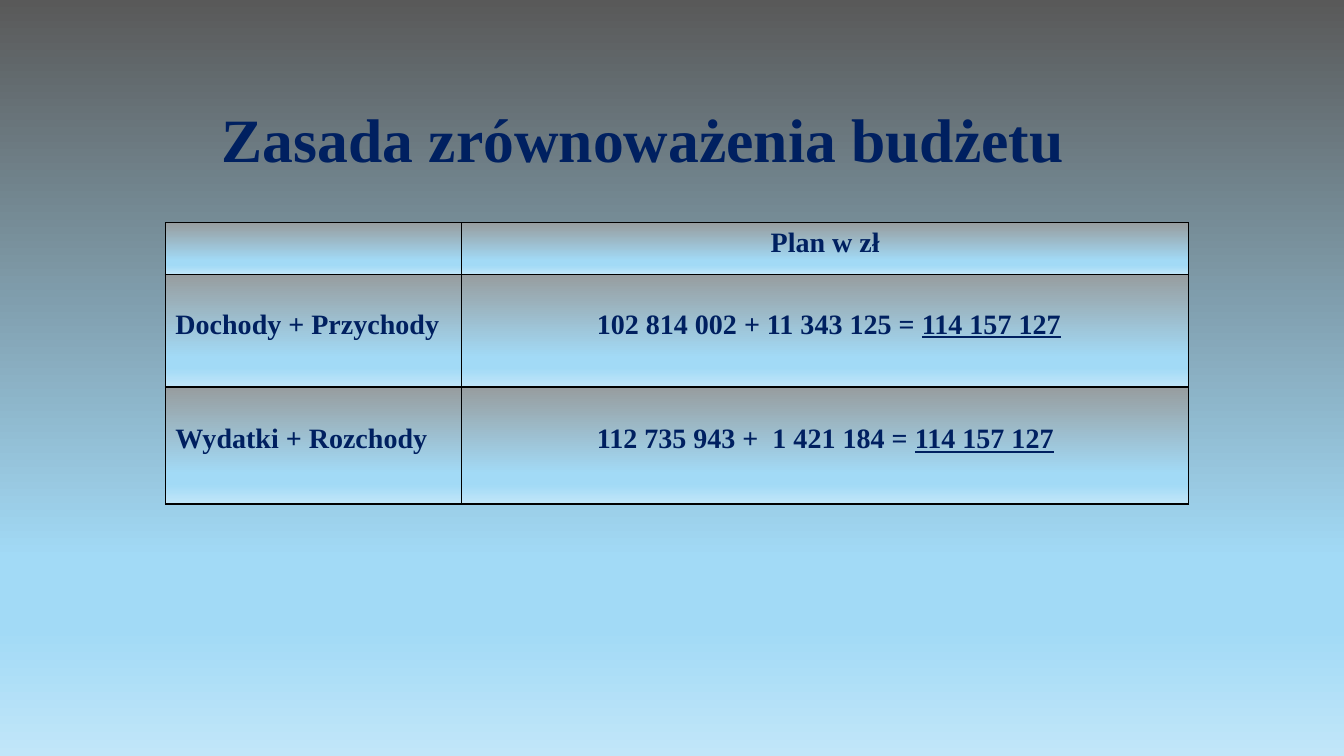
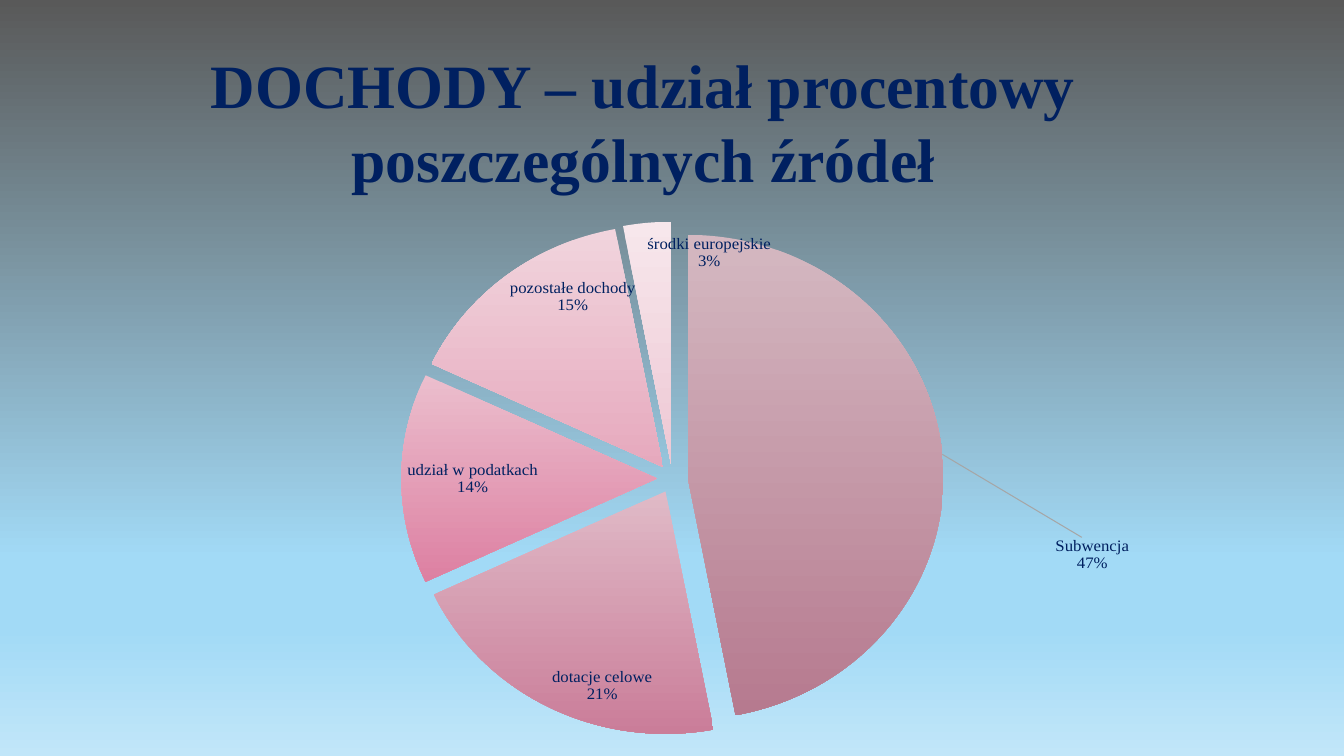
from dataclasses import dataclass

from lxml.etree import SubElement
from pptx import Presentation
from pptx.chart.data import CategoryChartData
from pptx.dml.color import RGBColor
from pptx.enum.chart import XL_CHART_TYPE, XL_LABEL_POSITION
from pptx.enum.text import MSO_ANCHOR, MSO_AUTO_SIZE, PP_ALIGN
from pptx.oxml import parse_xml
from pptx.oxml.ns import nsdecls, qn
from pptx.util import Inches, Pt


@dataclass(frozen=True)
class Theme:
    font: str = "Times New Roman"
    chart_font: str = "Calibri"
    ink: str = "002060"
    border: str = "000000"
    leader: str = "A6A6A6"
    sky: tuple = ((74, "A2DAF6"), (83, "A2DAF6"), (100, "C1E6F9"))
    page_top: tuple = (0, "595959")
    cell_top: tuple = (0, "979D9F")
    title_size: int = 44
    table_size: int = 20
    label_size: int = 12
    chart_size: int = 10


THEME = Theme()

BUDGET_ROWS = [
    ("Dochody + Przychody", " 102 814 002 + 11 343 125 = ", "114 157 127"),
    ("Wydatki + Rozchody", "112 735 943 +  1 421 184 = ", "114 157 127"),
]

INCOME = [
    ("Subwencja", 47, ("D4B8C1", "B67A8F")),
    ("dotacje celowe", 21, ("E0BAC7", "CA7D99")),
    ("udział w podatkach", 14, ("EBBECD", "DD80A2")),
    ("pozostałe dochody", 15, ("F1D4DD", "E6A9BD")),
    ("środki europejskie", 3, ("F7E7EC", "EEC8D4")),
]
LABEL_OFFSETS = {"Subwencja": (0.24, 0.17)}


def add_text(p, text, size, bold=True, underline=None, align=None):
    if align is not None:
        p.alignment = align
    r = p.add_run()
    r.text = text
    font = r.font
    font.name, font.size = THEME.font, Pt(size)
    font.bold, font.underline = bold, underline
    font.color.rgb = RGBColor.from_string(THEME.ink)


def paint_gradient(fill, owner, stops):
    fill.solid()
    solid = next(owner.iter(qn("a:solidFill")))
    gs = "".join(
        f'<a:gs pos="{pos * 1000}"><a:srgbClr val="{color}"/></a:gs>'
        for pos, color in stops
    )
    gradient = parse_xml(
        f'<a:gradFill {nsdecls("a")} rotWithShape="1"><a:gsLst>{gs}</a:gsLst>'
        '<a:lin ang="5400000" scaled="0"/></a:gradFill>'
    )
    solid.getparent().replace(solid, gradient)


def add_borders(cell):
    tcPr = cell._tc.get_or_add_tcPr()
    for i, side in enumerate(("lnL", "lnR", "lnT", "lnB")):
        tcPr.insert(i, parse_xml(
            f'<a:{side} {nsdecls("a")} w="12700"><a:solidFill>'
            f'<a:srgbClr val="{THEME.border}"/></a:solidFill></a:{side}>'
        ))


def add_titled_slide(prs, title, top):
    s = prs.slides.add_slide(prs.slide_layouts[5])
    sp = s.shapes.title
    sp.left, sp.top = Inches(1.88), Inches(top)
    sp.width, sp.height = Inches(9), Inches(0.96)
    tf = sp.text_frame
    tf.word_wrap = True
    tf.auto_size = MSO_AUTO_SIZE.NONE
    tf.vertical_anchor = MSO_ANCHOR.TOP
    p = tf.paragraphs[0]
    add_text(p, title, THEME.title_size, align=PP_ALIGN.CENTER)
    return s


def add_budget_table(s):
    widths, heights = (2.94, 7.21), (0.51, 1.12, 1.16)
    table = s.shapes.add_table(
        len(heights), len(widths), Inches(1.64), Inches(2.21),
        Inches(sum(widths)), Inches(sum(heights)),
    ).table
    for column, width in zip(table.columns, widths):
        column.width = Inches(width)
    for row, height in zip(table.rows, heights):
        row.height = Inches(height)
    for cell in table.iter_cells():
        paint_gradient(cell.fill, cell._tc, (THEME.cell_top, *THEME.sky))
        add_borders(cell)

    size = THEME.table_size
    header = table.cell(0, 1).text_frame.paragraphs[0]
    add_text(header, "Plan w zł", size, align=PP_ALIGN.CENTER)
    for i, (label, parts, total) in enumerate(BUDGET_ROWS, 1):
        name, amount = table.cell(i, 0), table.cell(i, 1)
        for cell in (name, amount):
            cell.vertical_anchor = MSO_ANCHOR.MIDDLE
            cell.margin_bottom = Inches(0.17)
        add_text(name.text_frame.paragraphs[0], label, size)
        p = amount.text_frame.paragraphs[0]
        add_text(p, parts, size, align=PP_ALIGN.CENTER)
        add_text(p, total, size, underline=True)


def manual_layout(**values):
    layout = parse_xml(f'<c:layout {nsdecls("c")}><c:manualLayout/></c:layout>')
    for key, value in values.items():
        SubElement(layout[0], qn(f"c:{key}")).set("val", str(value))
    return layout


def add_slice_label(point, name, share):
    label = point.data_label
    tf = label.text_frame
    add_text(tf.paragraphs[0], name, THEME.label_size, bold=False)
    add_text(tf.add_paragraph(), f"{share}%", THEME.label_size, bold=False)
    label.position = XL_LABEL_POSITION.INSIDE_END
    if name in LABEL_OFFSETS:
        x, y = LABEL_OFFSETS[name]
        dLbl = tf._txBody.getparent().getparent()
        dLbl.find(qn("c:idx")).addnext(manual_layout(x=x, y=y))


def add_leader_lines(series):
    labels = series._element.find(qn("c:dLbls"))
    for old in labels.findall(qn("c:showLeaderLines")):
        labels.remove(old)
    SubElement(labels, qn("c:showLeaderLines")).set("val", "1")
    labels.append(parse_xml(
        f'<c:leaderLines {nsdecls("c", "a")}><c:spPr><a:ln w="9525"><a:solidFill>'
        f'<a:srgbClr val="{THEME.leader}"/></a:solidFill></a:ln></c:spPr></c:leaderLines>'
    ))


def add_income_pie(s):
    data = CategoryChartData()
    data.categories = [name for name, _, _ in INCOME]
    data.add_series("DOCHODY", [share for _, share, _ in INCOME])
    chart = s.shapes.add_chart(
        XL_CHART_TYPE.PIE, Inches(2.14), Inches(2.2), Inches(9.06), Inches(5.08), data
    ).chart
    chart.has_title = chart.has_legend = False
    chart.font.name, chart.font.size = THEME.chart_font, Pt(THEME.chart_size)
    plot = chart.plots[0]
    plot.vary_by_categories = True
    series = plot.series[0]

    for i, (_, _, colors) in enumerate(INCOME):
        fill = series.points[i].format.fill
        paint_gradient(fill, series._element, zip((0, 100), colors))
    for dPt in series._element.findall(qn("c:dPt")):
        explosion = parse_xml(f'<c:explosion {nsdecls("c")} val="6"/>')
        dPt.find(qn("c:spPr")).addprevious(explosion)
    for i, (name, share, _) in enumerate(INCOME):
        add_slice_label(series.points[i], name, share)
    add_leader_lines(series)

    area = plot._element.getparent()
    for old in area.findall(qn("c:layout")):
        area.remove(old)
    area.insert(0, manual_layout(
        layoutTarget="inner", xMode="edge", yMode="edge", x=0.22, y=0, w=0.56, h=1
    ))


def main():
    prs = Presentation()
    prs.slide_width, prs.slide_height = Inches(13.33), Inches(7.5)
    master = prs.slide_master
    paint_gradient(master.background.fill, master._element, (THEME.page_top, *THEME.sky))
    add_budget_table(add_titled_slide(prs, "Zasada zrównoważenia budżetu", 0.95))
    add_income_pie(
        add_titled_slide(prs, "DOCHODY – udział procentowy poszczególnych źródeł", 0.42)
    )
    prs.save("out.pptx")


if __name__ == "__main__":
    main()
